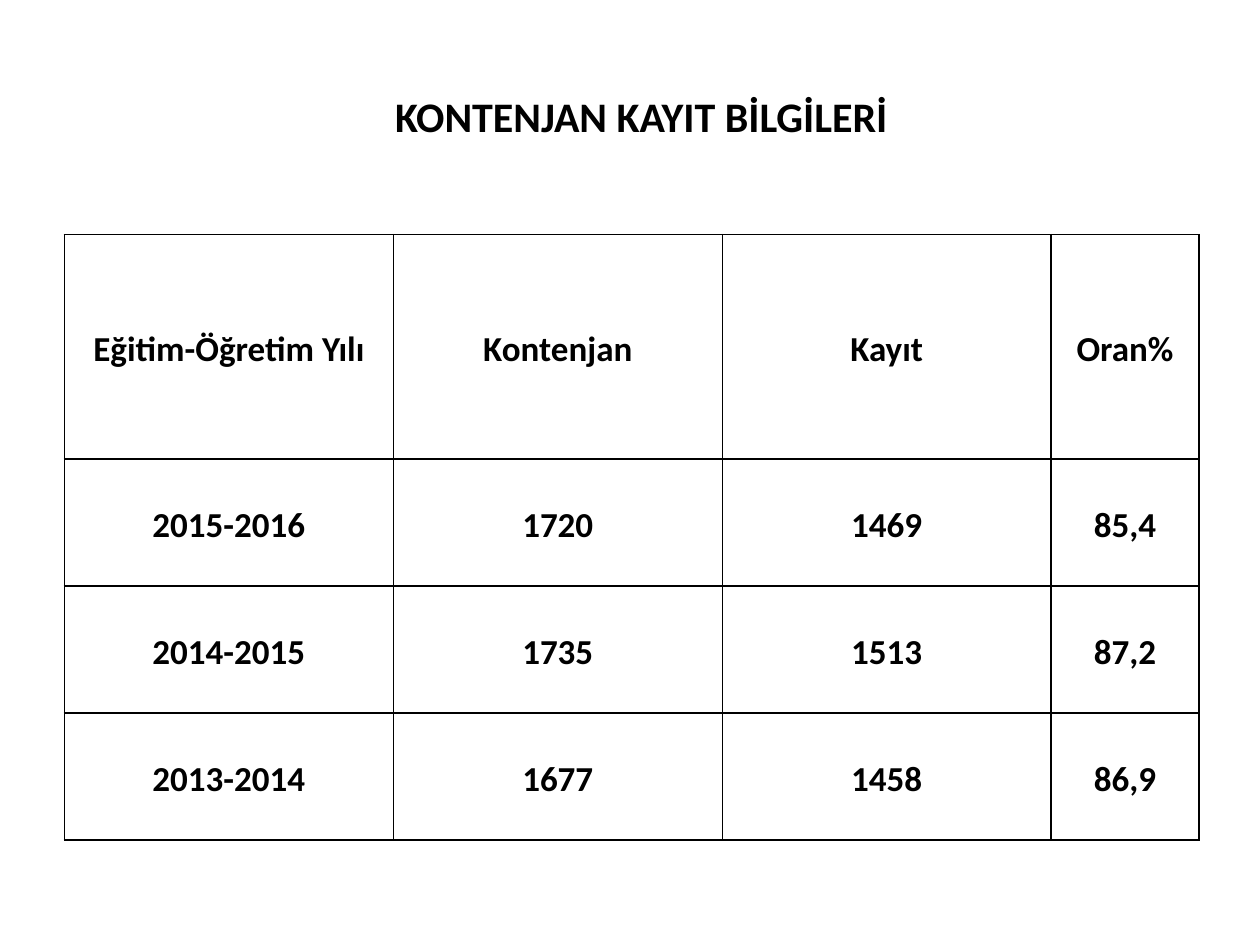
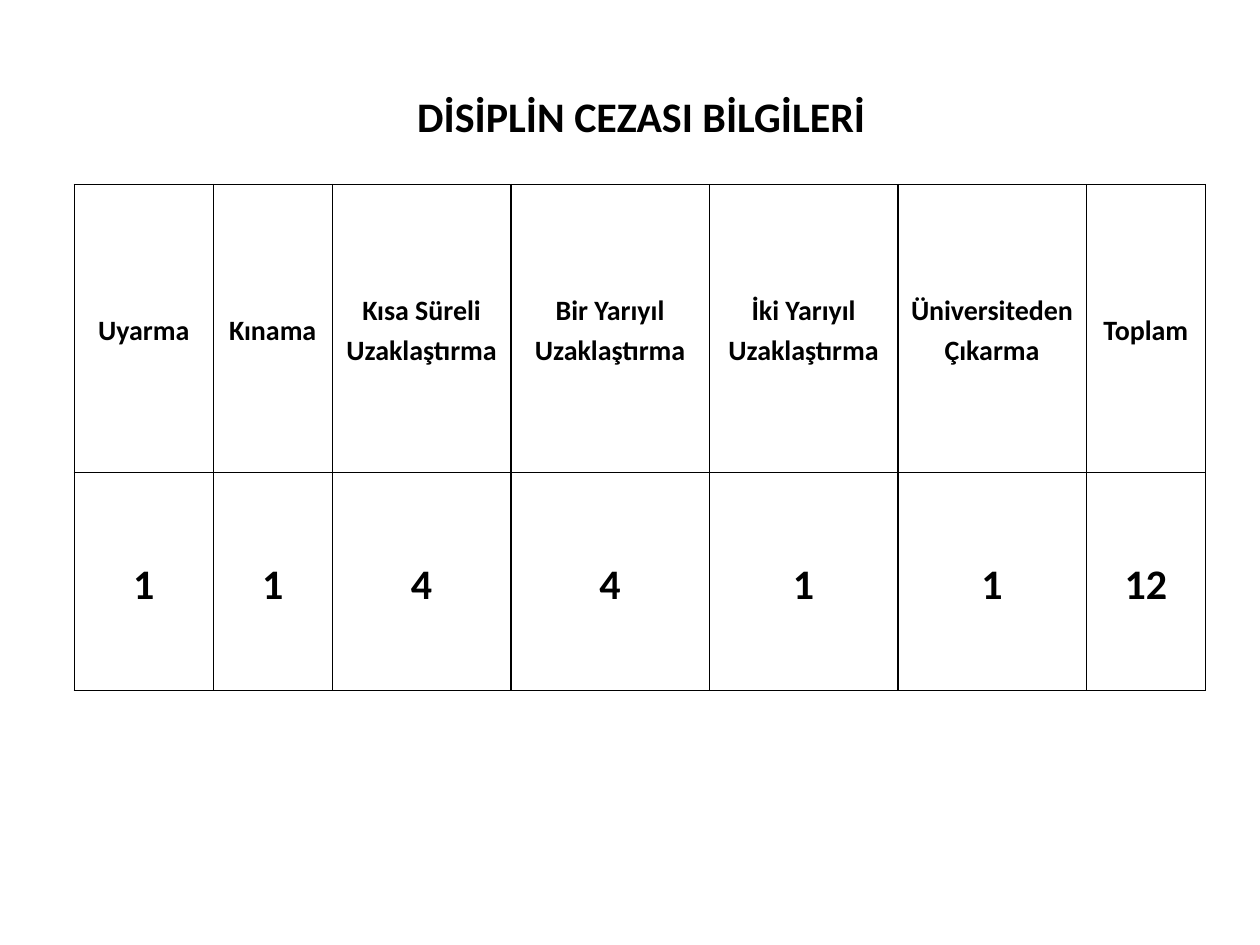
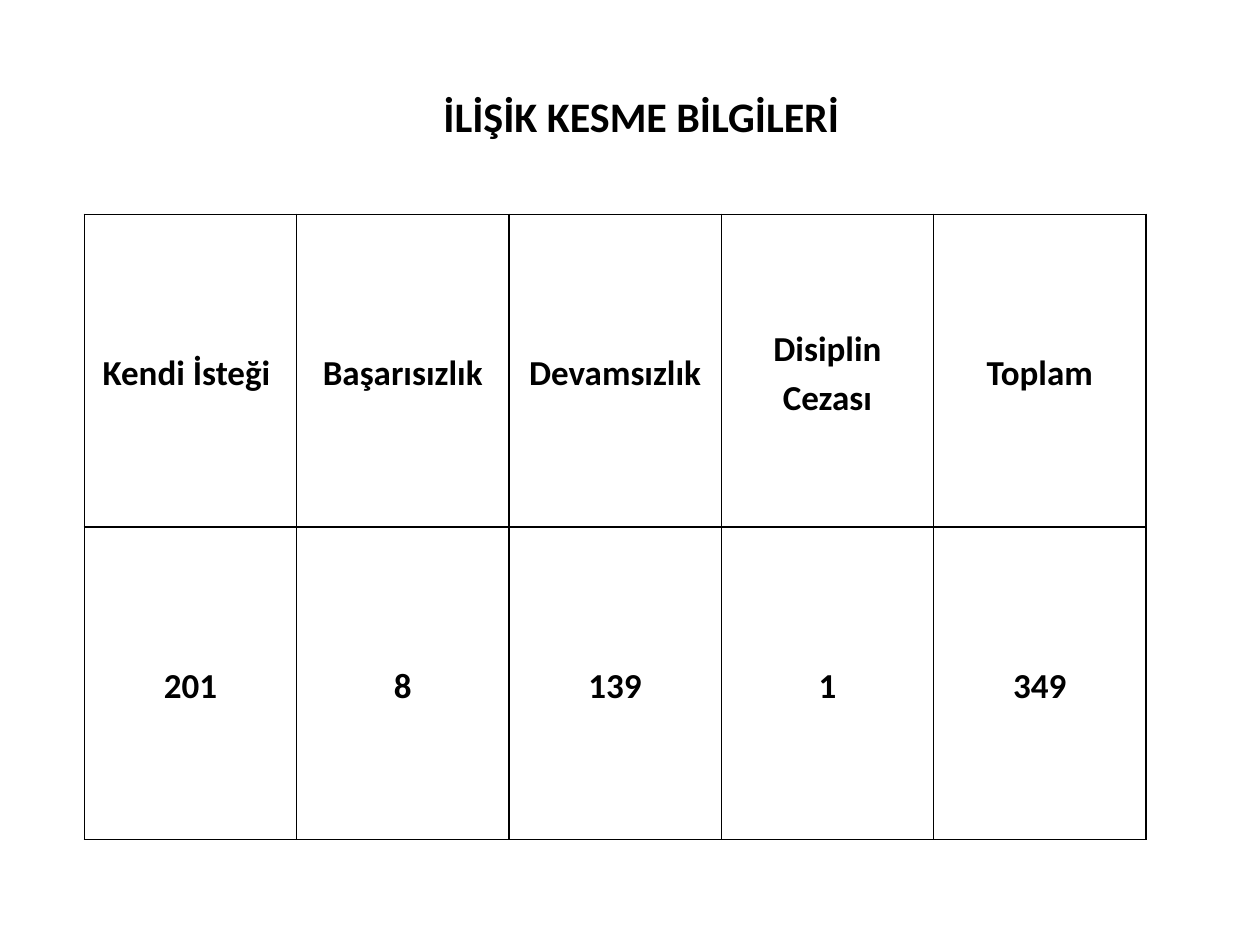
from lxml import etree
from pptx import Presentation
from pptx.dml.color import RGBColor
from pptx.enum.text import MSO_ANCHOR, PP_ALIGN
from pptx.oxml.ns import qn
from pptx.util import Cm, Pt

MIDDLE = MSO_ANCHOR.MIDDLE
CENTER = PP_ALIGN.CENTER
FONT = "Calibri"
BLACK = "000000"
WHITE = "FFFFFF"
TITLE_BOX = (1.5, 0.74, 22.86, 3.18)
TITLE_SIZE = 24
LINE_SPACING = 1.15
CELL_MARGIN = 0.18
BORDER_WIDTH = Pt(1)

QUOTA_ROWS = [
    ["Eğitim-Öğretim Yılı", "Kontenjan", "Kayıt", "Oran%"],
    ["2015-2016", "1720", "1469", "85,4"],
    ["2014-2015", "1735", "1513", "87,2"],
    ["2013-2014", "1677", "1458", "86,9"],
]
PENALTY_ROWS = [
    ["Uyarma", "Kınama", "Kısa Süreli Uzaklaştırma", "Bir Yarıyıl Uzaklaştırma",
     "İki Yarıyıl Uzaklaştırma", "Üniversiteden Çıkarma", "Toplam"],
    ["1", "1", "4", "4", "1", "1", "12"],
]
DISMISSAL_ROWS = [
    ["Kendi İsteği ", "Başarısızlık", "Devamsızlık", "Disiplin Cezası", "Toplam"],
    ["201", "8", "139", "1", "349"],
]


def color(value):
    """Turn a hex string into a colour."""
    return RGBColor.from_string(value)


def set_text(text_frame, text, size):
    """Write one centred bold paragraph and return it."""
    text_frame.text = text
    paragraph = text_frame.paragraphs[0]
    paragraph.alignment = CENTER
    for run in paragraph.runs:
        run.font.name = FONT
        run.font.size = Pt(size)
        run.font.bold = True
        run.font.color.rgb = color(BLACK)
    return paragraph


def add_borders(cell):
    """Draw a thin line on all four sides of a cell."""
    properties = cell._tc.get_or_add_tcPr()
    for side in ("a:lnL", "a:lnR", "a:lnT", "a:lnB"):
        line = etree.SubElement(properties, qn(side), w=str(BORDER_WIDTH))
        fill = etree.SubElement(line, qn("a:solidFill"))
        etree.SubElement(fill, qn("a:srgbClr"), val=BLACK)


def add_title(slide, text, box):
    """Place the slide heading in the given box."""
    title = slide.shapes.add_textbox(*map(Cm, box))
    title.fill.solid()
    title.fill.fore_color.rgb = color(WHITE)
    title.text_frame.word_wrap = True
    title.text_frame.vertical_anchor = MIDDLE
    set_text(title.text_frame, text, TITLE_SIZE)


def format_cell(cell, text, size):
    """Fill one cell with its text, borders and white ground."""
    add_borders(cell)
    cell.fill.solid()
    cell.fill.fore_color.rgb = color(WHITE)
    cell.vertical_anchor = MIDDLE
    cell.margin_left = cell.margin_right = Cm(CELL_MARGIN)
    cell.margin_top = cell.margin_bottom = 0
    set_text(cell.text_frame, text, size).line_spacing = LINE_SPACING


def add_grid(slide, rows, corner, widths, heights, header_size, body_size):
    """Place a bordered table with its top left at the given corner."""
    frame = slide.shapes.add_table(
        len(rows), len(widths), *map(Cm, corner), Cm(sum(widths)), Cm(sum(heights)))
    table = frame.table
    table.horz_banding = False
    for column, width in zip(table.columns, widths):
        column.width = Cm(width)
    for row, height, texts in zip(table.rows, heights, rows):
        row.height = Cm(height)
        size = header_size if texts is rows[0] else body_size
        for cell, text in zip(row.cells, texts):
            format_cell(cell, text, size)


def add_table_slide(presentation, title, *grid):
    """Add a slide with a heading above one table."""
    slide = presentation.slides.add_slide(presentation.slide_layouts[6])
    add_title(slide, title, TITLE_BOX)
    add_grid(slide, *grid)


def main():
    """Build and save the three slides."""
    presentation = Presentation()
    presentation.slide_width = Cm(25.4)
    presentation.slide_height = Cm(19.05)
    add_table_slide(presentation, "KONTENJAN KAYIT BİLGİLERİ", QUOTA_ROWS,
                    (1.3, 4.73), [6.63] * 3 + [2.98], [4.52] + [2.56] * 3, 20, 20)
    add_table_slide(presentation, "DİSİPLİN CEZASI BİLGİLERİ", PENALTY_ROWS,
                    (1.5, 3.72), [2.8, 2.4, 3.6, 4, 3.8, 3.8, 2.4], [5.8, 4.4], 16, 24)
    add_table_slide(presentation, "İLİŞİK KESME BİLGİLERİ", DISMISSAL_ROWS,
                    (1.7, 4.32), [4.28] * 5, [6.3] * 2, 20, 20)
    presentation.save("out.pptx")


if __name__ == "__main__":
    main()
